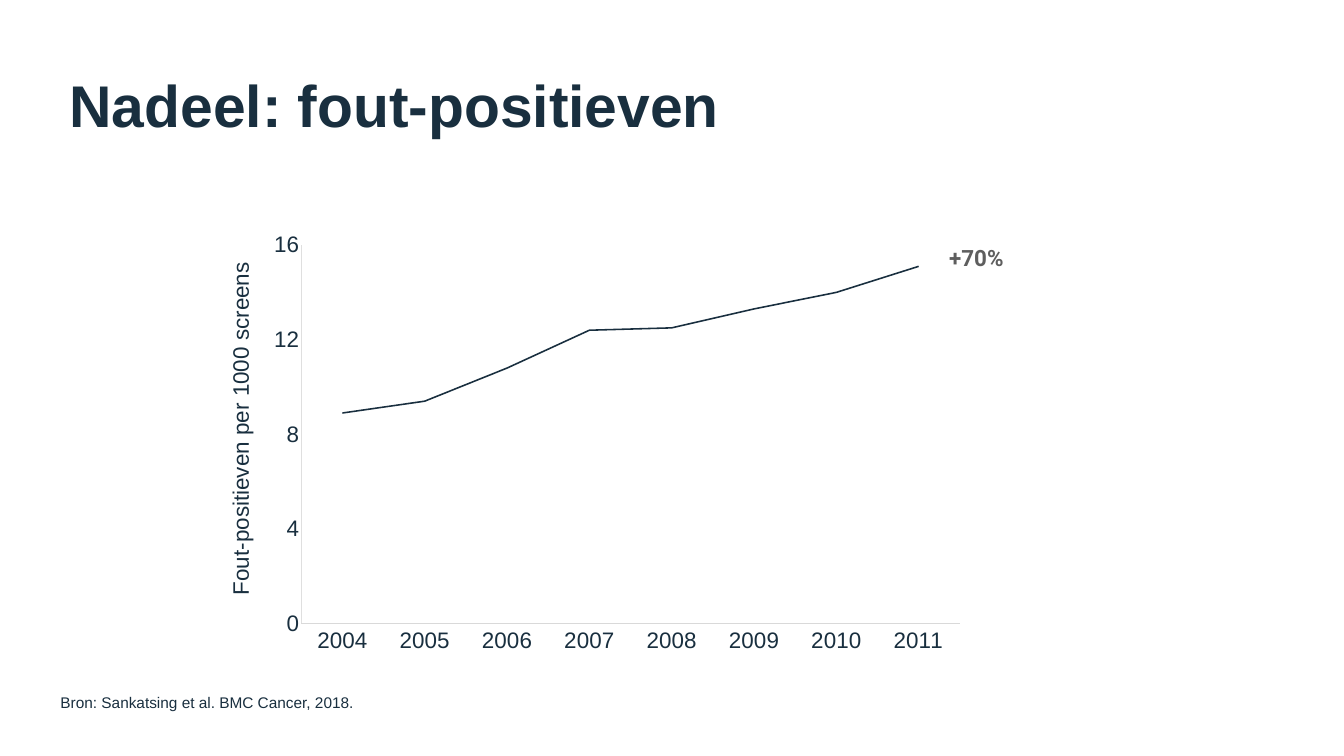
from dataclasses import dataclass
from lxml.etree import SubElement
from pptx import Presentation
from pptx.chart.data import CategoryChartData
from pptx.dml.color import RGBColor
from pptx.enum.chart import XL_CHART_TYPE, XL_TICK_LABEL_POSITION, XL_TICK_MARK
from pptx.enum.text import MSO_ANCHOR, MSO_AUTO_SIZE, PP_ALIGN
from pptx.oxml.ns import qn
from pptx.util import Cm, Pt


@dataclass(frozen=True)
class Theme:
    navy: RGBColor = RGBColor(0x19, 0x2F, 0x3F)
    grey: RGBColor = RGBColor(0x5E, 0x5E, 0x5E)
    category_line: RGBColor = RGBColor(0xD9, 0xD9, 0xD9)
    value_line: RGBColor = RGBColor(0xDF, 0xDF, 0xDF)
    body_font: str = "Arial"
    accent_font: str = "Roboto"
    title_size: Pt = Pt(84)
    label_size: Pt = Pt(32)
    source_size: Pt = Pt(22)
    chart_size: Pt = Pt(10)


theme = Theme()


def style_font(font, size, color=theme.navy, name=theme.body_font, bold=False):
    font.size = size
    font.name = name
    font.bold = bold
    font.color.rgb = color


def add_text(page, text, area, size, align=PP_ALIGN.LEFT, anchor=MSO_ANCHOR.TOP,
             wrap=False, inset=0.15, rotation=0, line_spacing=None, **font_format):
    box = page.shapes.add_textbox(*map(Cm, area))
    box.rotation = rotation
    frame = box.text_frame
    frame.word_wrap = wrap
    frame.auto_size = MSO_AUTO_SIZE.SHAPE_TO_FIT_TEXT
    frame.vertical_anchor = anchor
    frame.margin_left = frame.margin_right = Cm(inset)
    frame.margin_top = frame.margin_bottom = Cm(inset)
    para = frame.paragraphs[0]
    para.alignment = align
    para.line_spacing = line_spacing
    span = para.add_run()
    span.text = text
    style_font(span.font, size, **font_format)


deck = Presentation()
deck.slide_width = Cm(67.74)
deck.slide_height = Cm(38.1)
page = deck.slides.add_slide(deck.slide_layouts[6])

add_text(page, "Nadeel: fout-positieven", (3.35, 3.3, 33.2, 3.89), theme.title_size, bold=True)
add_text(page, "Fout-positieven per 1000 screens", (3.05, 20.52, 17.17, 2.08),
         theme.label_size, rotation=270, line_spacing=1.5)

data = CategoryChartData()
data.categories = [str(year) for year in range(2004, 2012)]
data.add_series("Series 1", (8.9, 9.4, 10.8, 12.4, 12.5, 13.3, 14, 15.1))
chart = page.shapes.add_chart(
    XL_CHART_TYPE.LINE, Cm(12.67), Cm(11.25), Cm(35.89), Cm(22.05), data).chart
chart.has_legend = False
chart.has_title = False
style_font(chart.font, theme.chart_size, color=theme.grey, name=theme.accent_font)
chart.plots[0].vary_by_categories = False

series = chart.plots[0].series[0]
series.smooth = False
series.format.line.color.rgb = theme.navy
series.format.line.width = Pt(2.25)

for axis, line_color, number_format in (
        (chart.category_axis, theme.category_line, "General"),
        (chart.value_axis, theme.value_line, "0")):
    axis.has_major_gridlines = False
    axis.major_tick_mark = axis.minor_tick_mark = XL_TICK_MARK.NONE
    axis.format.line.color.rgb = line_color
    axis.format.line.width = Pt(1)
    axis.tick_labels.number_format = number_format
    axis.tick_labels.number_format_is_linked = False
    style_font(axis.tick_labels.font, theme.label_size)
chart.category_axis.tick_label_position = XL_TICK_LABEL_POSITION.LOW
chart.value_axis.minimum_scale = 0
chart.value_axis.maximum_scale = 16
chart.value_axis.major_unit = 4

plot_area = chart.element.find(".//" + qn("c:plotArea"))
for layout in plot_area.findall(qn("c:layout")):
    plot_area.remove(layout)
layout = SubElement(plot_area, qn("c:layout"))
plot_area.insert(0, layout)
manual = SubElement(layout, qn("c:manualLayout"))
for tag, value in (("layoutTarget", "inner"), ("xMode", "edge"), ("yMode", "edge"),
                   ("x", "0.07"), ("y", "0.05"), ("w", "0.925"), ("h", "0.865")):
    SubElement(manual, qn("c:" + tag)).set("val", value)

add_text(page, "+70%", (46.28, 12.14, 5.87, 1.65), theme.label_size, align=PP_ALIGN.CENTER,
         anchor=MSO_ANCHOR.MIDDLE, wrap=True, color=theme.grey, name=theme.accent_font, bold=True)
add_text(page, "Bron: Sankatsing et al. BMC Cancer, 2018.", (2.92, 34.82, 15.47, 1.19),
         theme.source_size, inset=0.13)

deck.save("out.pptx")
